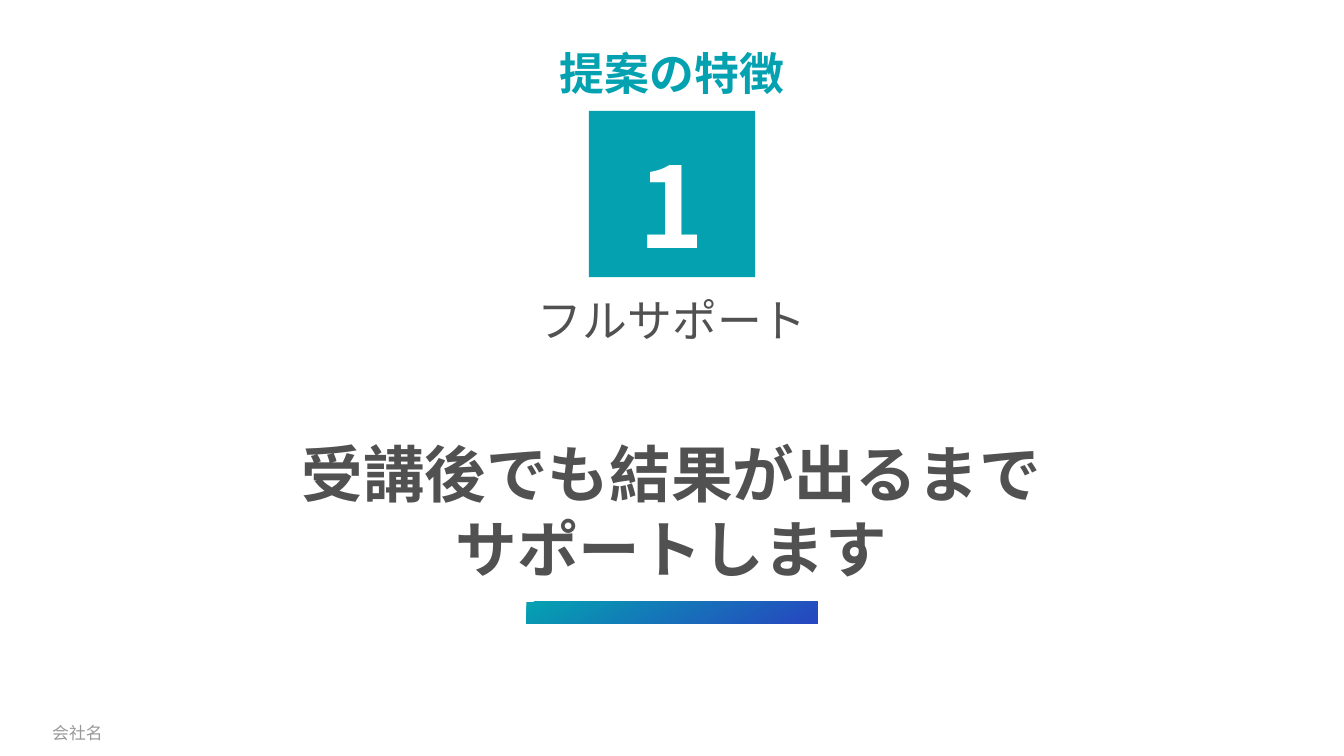
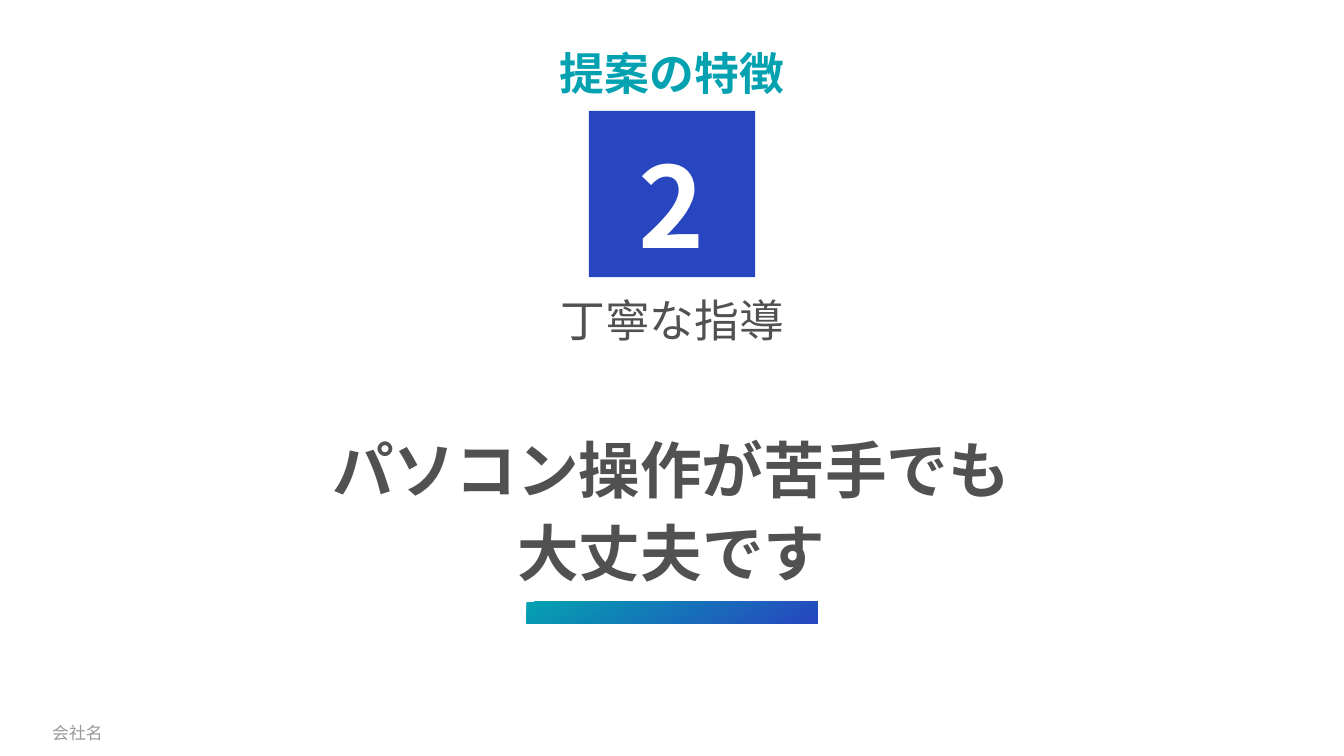
from dataclasses import dataclass

from lxml.etree import SubElement
from pptx import Presentation
from pptx.dml.color import RGBColor
from pptx.enum.shapes import MSO_SHAPE
from pptx.enum.text import MSO_ANCHOR, PP_ALIGN
from pptx.oxml.ns import qn
from pptx.util import Inches, Pt


@dataclass(frozen=True)
class Theme:
    teal: RGBColor = RGBColor(0x04, 0xA2, 0xB1)
    blue: RGBColor = RGBColor(0x27, 0x46, 0xC0)
    ink: RGBColor = RGBColor(0x51, 0x51, 0x51)
    muted: RGBColor = RGBColor(0x98, 0x98, 0x98)
    white: RGBColor = RGBColor(0xFF, 0xFF, 0xFF)
    heading_font: str = "Noto Sans CJK JP"
    footer_font: str = "Calibri"
    heading_size: int = 32
    number_size: int = 80
    message_size: int = 44
    footer_size: int = 12


THEME = Theme()
WIDTH = 13.33


def write(shape, lines, size, color, bold=False, font=THEME.heading_font,
          align=PP_ALIGN.CENTER, top=0.05, spacing=None, after=0):
    frame = shape.text_frame
    frame.word_wrap = True
    frame.vertical_anchor = MSO_ANCHOR.MIDDLE
    frame.margin_top = Inches(top)
    for index, line in enumerate(lines):
        paragraph = frame.add_paragraph() if index else frame.paragraphs[0]
        paragraph.text = line
        paragraph.alignment = align
        paragraph.line_spacing = spacing
        paragraph.space_after = Pt(after)
        paragraph.font.size = Pt(size)
        paragraph.font.bold = bold
        paragraph.font.color.rgb = color
        paragraph.font.name = font
        defaults = paragraph.font.fill._xPr
        SubElement(defaults, qn("a:ea")).set("typeface", THEME.heading_font)


def add_rectangle(slide, top, width, height):
    rectangle = slide.shapes.add_shape(
        MSO_SHAPE.RECTANGLE, Inches((WIDTH - width) / 2), Inches(top),
        Inches(width), Inches(height))
    rectangle.shadow.inherit = False
    rectangle.line.fill.background()
    return rectangle


FEATURES = [
    (THEME.teal, "フルサポート", ["受講後でも結果が出るまで\vサポートします"]),
    (THEME.blue, "丁寧な指導", ["パソコン操作が苦手でも", "大丈夫です"]),
]

deck = Presentation()
deck.slide_width = Inches(WIDTH)
deck.slide_height = Inches(7.5)

for number, (accent, feature, message) in enumerate(FEATURES, start=1):
    slide = deck.slides.add_slide(deck.slide_layouts[6])

    title = slide.shapes.add_textbox(0, Inches(0.36), Inches(WIDTH), Inches(0.67))
    write(title, ["提案の特徴"], THEME.heading_size, THEME.teal, bold=True, spacing=1.1)

    company = slide.shapes.add_textbox(
        Inches(0.42), Inches(7.07), Inches(3.94), Inches(0.4))
    write(company, ["会社名"], THEME.footer_size, THEME.muted,
          font=THEME.footer_font, align=PP_ALIGN.LEFT)

    badge = add_rectangle(slide, 1.1, 1.65, 1.65)
    badge.fill.solid()
    badge.fill.fore_color.rgb = accent
    write(badge, [str(number)], THEME.number_size, THEME.white, bold=True, top=0.24)

    subtitle = slide.shapes.add_textbox(
        Inches(4.7), Inches(2.75), Inches(3.94), Inches(0.82))
    write(subtitle, [feature], THEME.heading_size, THEME.ink, top=0.08, after=6)

    statement = slide.shapes.add_textbox(
        Inches(2.41), Inches(4.22), Inches(8.5), Inches(1.65))
    write(statement, message, THEME.message_size, THEME.ink, bold=True,
          top=0.08, spacing=Pt(53), after=6)

    underline = add_rectangle(slide, 5.97, 2.89, 0.22)
    underline.fill.gradient()
    underline.fill.gradient_angle = 300
    for stop, color, position in zip(
            underline.fill.gradient_stops, (THEME.teal, THEME.blue), (0, 1)):
        stop.color.rgb = color
        stop.position = position

deck.save("out.pptx")
